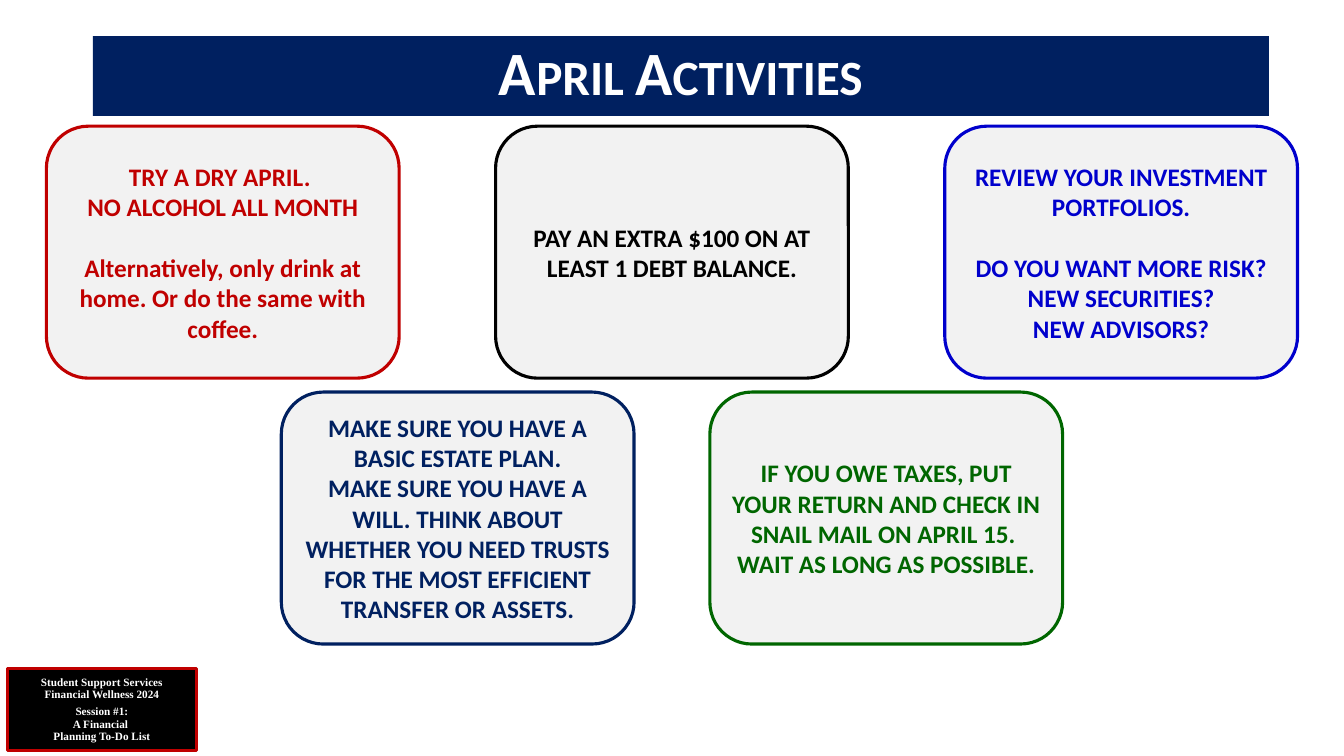
from dataclasses import dataclass

from pptx import Presentation
from pptx import util as u
from pptx.dml.color import RGBColor
from pptx.enum import shapes, text

WHITE, BLACK, NAVY, RED = "FFFFFF", "000000", "002060", "C00000"
BLUE, GREEN, PALE = "0000CC", "006600", "F2F2F2"


@dataclass
class Style:
    font: str
    size: float
    color: str
    spacing: float = 1.0
    small_caps: bool = False


@dataclass
class Line:
    text: str
    before: float = 0


@dataclass
class Activity:
    color: str
    lines: list[Line]


def rgb(value: str) -> RGBColor:
    return RGBColor.from_string(value)


def add_box(s, kind, left: float, top: float, width: float, height: float,
            fill: str, border: str | None, lines: list[Line], style: Style):
    """Draw a filled box, measured in cm, with centred bold text."""
    sp = s.shapes.add_shape(kind, u.Cm(left), u.Cm(top), u.Cm(width), u.Cm(height))
    sp.shadow.inherit = False
    sp.fill.solid()
    sp.fill.fore_color.rgb = rgb(fill)
    if border:
        sp.line.color.rgb = rgb(border)
        sp.line.width = u.Pt(2.25)
    else:
        sp.line.fill.background()
    tf = sp.text_frame
    tf.word_wrap = True
    tf.vertical_anchor = text.MSO_ANCHOR.MIDDLE
    for i, line in enumerate(lines):
        p = tf.add_paragraph() if i else tf.paragraphs[0]
        p.alignment = text.PP_ALIGN.CENTER
        p.line_spacing = style.spacing
        if line.before:
            p.space_before = u.Pt(line.before)
        r = p.add_run()
        r.text = line.text
        r.font.name = style.font
        r.font.size = u.Pt(style.size)
        r.font.bold = True
        r.font.color.rgb = rgb(style.color)
        if style.small_caps:
            r.font._element.set("cap", "small")


def add_row(s, left: float, top: float, step: float, activities: list[Activity]):
    """Draw equally spaced activity cards."""
    for i, card in enumerate(activities):
        add_box(s, shapes.MSO_SHAPE.ROUNDED_RECTANGLE, left + i * step, top,
                8.89, 6.35, PALE, card.color, card.lines,
                Style("Calibri", 18, card.color))


TOP_ROW = [
    Activity(RED, [
        Line("TRY A DRY APRIL. "),
        Line("NO ALCOHOL ALL MONTH"),
        Line("Alternatively, only drink at home. Or do the same with coffee.", 22),
    ]),
    Activity(BLACK, [Line("PAY AN EXTRA $100 ON AT LEAST 1 DEBT BALANCE.")]),
    Activity(BLUE, [
        Line("REVIEW YOUR INVESTMENT PORTFOLIOS."),
        Line("DO YOU WANT MORE RISK?", 22),
        Line("NEW SECURITIES?"),
        Line("NEW ADVISORS?"),
    ]),
]
BOTTOM_ROW = [
    Activity(NAVY, [
        Line("MAKE SURE YOU HAVE A BASIC ESTATE PLAN."),
        Line("MAKE SURE YOU HAVE A WILL. THINK ABOUT WHETHER YOU NEED TRUSTS "
             "FOR THE MOST EFFICIENT TRANSFER OR ASSETS."),
    ]),
    Activity(GREEN, [
        Line("IF YOU OWE TAXES, PUT YOUR RETURN AND CHECK IN SNAIL MAIL "
             "ON APRIL 15. "),
        Line("WAIT AS LONG AS POSSIBLE."),
    ]),
]
SESSION = [
    Line("Student Support Services"),
    Line("Financial Wellness 2024"),
    Line("Session #1:", 4),
    Line("A Financial "),
    Line("Planning To-Do List"),
]


def main() -> None:
    prs = Presentation()
    prs.slide_width, prs.slide_height = u.Cm(33.87), u.Cm(19.05)
    s = prs.slides.add_slide(prs.slide_layouts[6])
    rectangle = shapes.MSO_SHAPE.RECTANGLE

    # Session label
    add_box(s, rectangle, 0.18, 16.84, 4.78, 2.08, BLACK, RED, SESSION,
            Style("Times New Roman", 8, WHITE, 0.9))

    # Title band
    add_box(s, rectangle, 2.34, 0.91, 29.64, 2.01, NAVY, None,
            [Line("April Activities")], Style("Calibri", 44, WHITE, 0.9, True))

    # Activity cards
    add_row(s, 1.17, 3.18, 11.32, TOP_ROW)
    add_row(s, 7.09, 9.88, 10.8, BOTTOM_ROW)

    prs.save("out.pptx")


if __name__ == "__main__":
    main()
